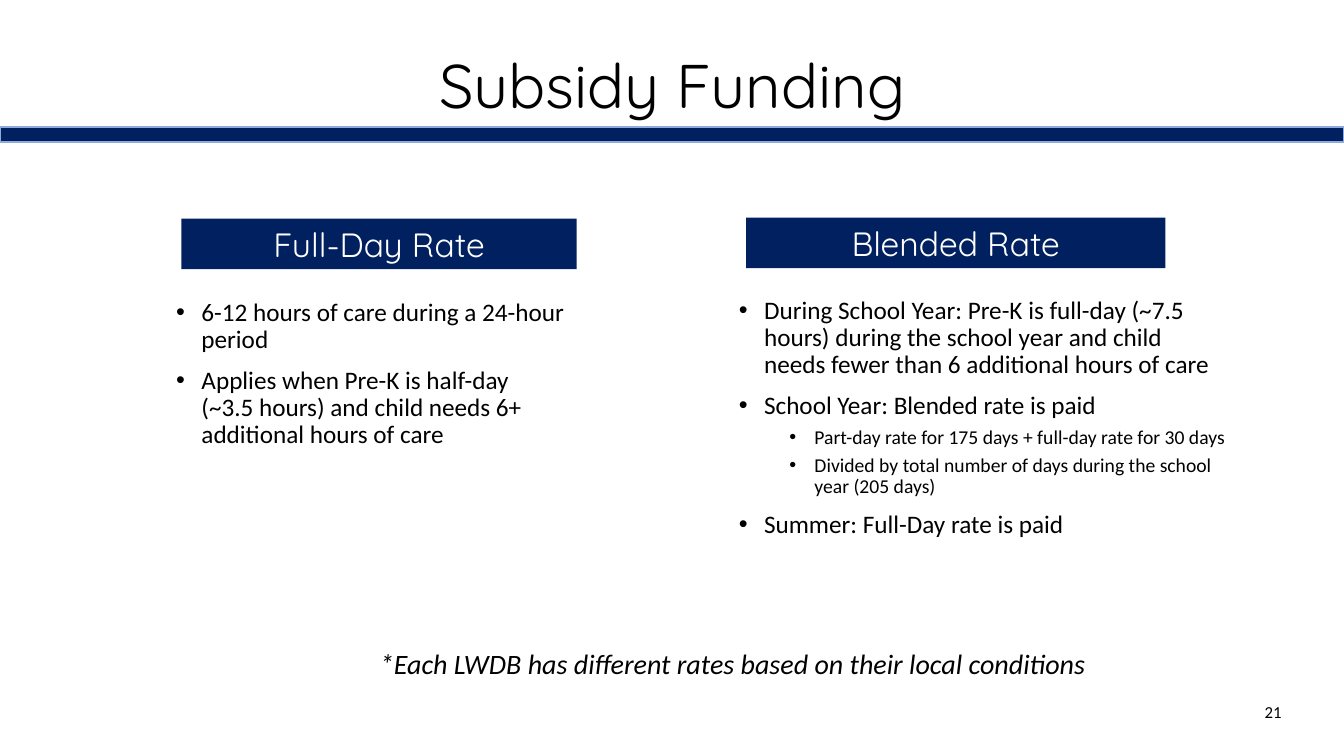
from dataclasses import dataclass

from lxml import etree
from pptx import Presentation
from pptx.dml.color import RGBColor
from pptx.enum.shapes import MSO_SHAPE
from pptx.enum.text import MSO_ANCHOR, PP_ALIGN
from pptx.oxml.ns import qn
from pptx.util import Inches, Pt


@dataclass(frozen=True)
class Theme:
    navy: RGBColor = RGBColor(0x00, 0x20, 0x60)
    edge: RGBColor = RGBColor(0x8F, 0xAA, 0xDC)
    ink: RGBColor = RGBColor(0x00, 0x00, 0x00)
    paper: RGBColor = RGBColor(0xFF, 0xFF, 0xFF)
    heading_font: str = "Quicksand"
    body_font: str = "Calibri"
    title: int = 44
    heading: int = 24
    note: int = 20
    bullet: int = 18
    detail: int = 14
    number: int = 12


THEME = Theme()


def write(paragraph, text, size, font=THEME.body_font, color=THEME.ink,
          align=PP_ALIGN.LEFT, italic=False, spacing=1.0, before=0):
    paragraph.alignment = align
    paragraph.line_spacing = spacing
    paragraph.space_before = Pt(before)
    run = paragraph.add_run()
    run.text = text
    run.font.size = Pt(size)
    run.font.name = font
    run.font.color.rgb = color
    run.font.italic = italic


def add_bullet(paragraph, indent):
    properties = paragraph._p.get_or_add_pPr()
    properties.set("marL", str(Inches(indent)))
    properties.set("indent", str(Inches(-0.25)))
    etree.SubElement(properties, qn("a:buFont")).set("typeface", "Arial")
    etree.SubElement(properties, qn("a:buChar")).set("char", "•")


def add_text_frame(slide, place, anchor=MSO_ANCHOR.TOP):
    frame = slide.shapes.add_textbox(*map(Inches, place)).text_frame
    frame.word_wrap = True
    frame.vertical_anchor = anchor
    return frame


def add_line(slide, place, text, size, anchor=MSO_ANCHOR.TOP, **style):
    frame = add_text_frame(slide, place, anchor)
    write(frame.paragraphs[0], text, size, **style)


def add_bar(slide, place, edge=None):
    bar = slide.shapes.add_shape(MSO_SHAPE.RECTANGLE, *map(Inches, place))
    bar.shadow.inherit = False
    bar.fill.solid()
    bar.fill.fore_color.rgb = THEME.navy
    if edge is None:
        bar.line.fill.background()
    else:
        bar.line.color.rgb = edge
        bar.line.width = Pt(1)
    return bar


def add_heading(slide, place, text):
    frame = add_bar(slide, place).text_frame
    frame.vertical_anchor = MSO_ANCHOR.TOP
    write(frame.paragraphs[0], text, THEME.heading, font=THEME.heading_font,
          color=THEME.paper, align=PP_ALIGN.CENTER)


def add_bullets(slide, place, items):
    frame = add_text_frame(slide, place)
    for index, (level, text) in enumerate(items):
        paragraph = frame.add_paragraph() if index else frame.paragraphs[0]
        paragraph.level = level
        size, before, indent = ((THEME.detail, 5, 0.75) if level
                                else (THEME.bullet, 10, 0.25))
        write(paragraph, text, size, spacing=0.9, before=before)
        add_bullet(paragraph, indent)


def main():
    deck = Presentation()
    deck.slide_width = Inches(13.33)
    deck.slide_height = Inches(7.5)
    slide = deck.slides.add_slide(deck.slide_layouts[6])

    add_line(slide, (0.92, 0.15, 11.5, 1.45), "Subsidy Funding", THEME.title,
             anchor=MSO_ANCHOR.MIDDLE, font=THEME.heading_font,
             align=PP_ALIGN.CENTER, spacing=0.9)

    add_heading(slide, (1.8, 2.17, 3.92, 0.5), "Full-Day Rate")
    add_bullets(slide, (1.65, 2.92, 4.06, 1.98), [
        (0, "6-12 hours of care during a 24-hour period"),
        (0, "Applies when Pre-K is half-day (~3.5 hours) and child needs 6+ "
            "additional hours of care"),
    ])

    add_heading(slide, (7.4, 2.16, 4.16, 0.5), "Blended Rate")
    add_bullets(slide, (7.23, 2.9, 5.06, 2.89), [
        (0, "During School Year: Pre-K is full-day (~7.5 hours) during the "
            "school year and child needs fewer than 6 additional hours of care"),
        (0, "School Year: Blended rate is paid"),
        (1, "Part-day rate for 175 days + full-day rate for 30 days"),
        (1, "Divided by total number of days during the school year (205 days)"),
        (0, "Summer: Full-Day rate is paid"),
    ])

    add_line(slide, (3.67, 6.4, 7.64, 0.65),
             "*Each LWDB has different rates based on their local conditions",
             THEME.note, italic=True, spacing=0.9, before=10)
    add_line(slide, (9.81, 6.86, 3, 0.4), "21", THEME.number,
             anchor=MSO_ANCHOR.MIDDLE, align=PP_ALIGN.RIGHT)
    add_bar(slide, (0, 1.26, 13.33, 0.15), edge=THEME.edge)

    deck.save("out.pptx")


if __name__ == "__main__":
    main()
